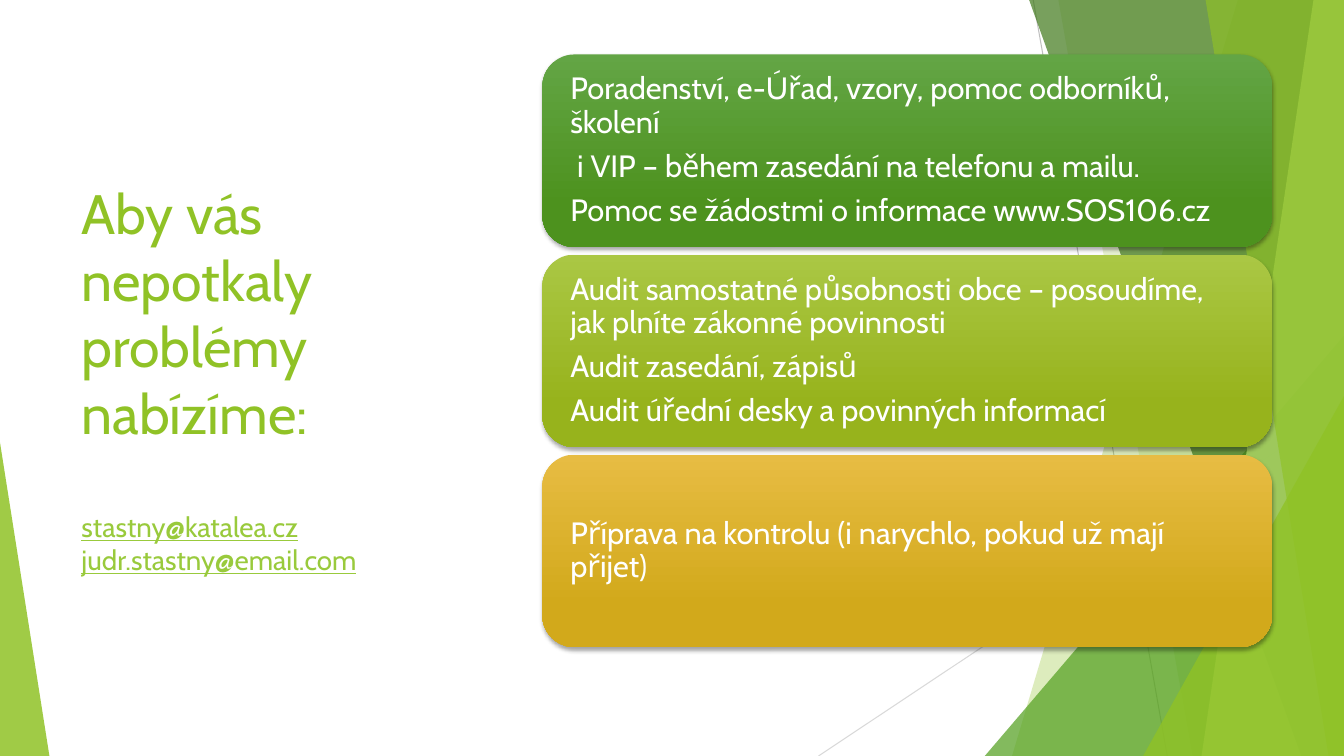
from dataclasses import dataclass

from lxml.etree import SubElement
from pptx import Presentation
from pptx.dml.color import RGBColor as Rgb
from pptx.enum.shapes import MSO_CONNECTOR as Link, MSO_SHAPE as Kind
from pptx.enum.text import MSO_ANCHOR as Anchor, PP_ALIGN as Align
from pptx.oxml.ns import qn
from pptx.util import Emu, Inches, Pt

# The grid has square cells; lengths below are counted in its columns and rows.
CELL = Inches(0.1)
WIDE, HIGH = 133.33, 75
FONT = "Cabin"
HUES = {
    "lime": "90C226", "leaf": "54A021", "moss": "3F7819", "pale": "C0E474",
    "mail": "99CA3C", "white": "FFFFFF", "black": "000000",
    "grey": "BFBFBF", "mist": "D9D9D9",
    "green1": "63A545", "green2": "4D921E",
    "olive1": "AAC744", "olive2": "97B31C",
    "gold1": "E7BC43", "gold2": "D2A91B",
}


@dataclass(frozen=True)
class Ray:
    start: tuple[float, float]
    end: tuple[float, float]
    hue: str


@dataclass(frozen=True)
class Facet:
    """A band from its top and base columns to the right edge."""
    top: float
    base: float
    hue: str
    alpha: int


@dataclass(frozen=True)
class Wedge:
    """A triangle standing on the bottom edge; tip is its apex share."""
    left: float
    top: float
    width: float
    tip: int
    hue: str
    alpha: int


@dataclass(frozen=True)
class Card:
    hues: tuple[str, str]
    lines: tuple[str, ...]


RAYS = (
    Ray((102.5, 0), (115.8, HIGH), "grey"),
    Ray((WIDE, 40.3), (81.2, HIGH), "mist"),
)
DECOR = (
    Facet(122.8, 100.4, "lime", 30),
    Facet(105, 118.3, "lime", 20),
    Wedge(97.7, 33.3, 35.63, 1, "leaf", 72),
    Facet(102.1, 129.1, "moss", 70),
    Facet(130.3, 119.2, "pale", 70),
    Facet(119.6, 131.8, "lime", 65),
    Wedge(113.4, 39.3, 19.93, 1, "lime", 80),
    Wedge(0, 43.9, 4.9, 0, "lime", 85),
)
CARDS = (
    Card(("green1", "green2"), (
        "Poradenství, e-Úřad, vzory, pomoc odborníků, školení",
        " i VIP – během zasedání na telefonu a mailu.",
        "Pomoc se žádostmi o informace www.SOS106.cz")),
    Card(("olive1", "olive2"), (
        "Audit samostatné působnosti obce – posoudíme, jak plníte zákonné povinnosti",
        "Audit zasedání, zápisů",
        "Audit úřední desky a povinných informací")),
    Card(("gold1", "gold2"), (
        "Příprava na kontrolu (i narychlo, pokud už mají přijet)",)),
)
TITLE = "Aby vás nepotkaly problémy nabízíme:"
MAILS = ("stastny@katalea.cz", "judr.stastny@email.com")


def grid(*cells: float) -> list[Emu]:
    return [Emu(round(n * CELL)) for n in cells]


def tint(name: str) -> Rgb:
    return Rgb.from_string(HUES[name])


def put(frame, text: str, *, size: float, hue: str, under: bool = False,
        before: float = 0, after: float = 0, lead: float = 1) -> None:
    """Add one paragraph, using the empty first one if it is free."""
    para = frame.add_paragraph() if frame.text else frame.paragraphs[0]
    para.alignment, para.line_spacing = Align.LEFT, lead
    para.space_before, para.space_after = Pt(before), Pt(after)
    run = para.add_run()
    run.text = text
    font = run.font
    font.name, font.size, font.underline = FONT, Pt(size), under
    font.color.rgb = tint(hue)


def paint(shape, hue: str, alpha: int) -> None:
    shape.shadow.inherit = False
    shape.line.fill.background()
    shape.fill.solid()
    shape.fill.fore_color.rgb = tint(hue)
    tone = shape.element.spPr.find(qn("a:solidFill")).find(qn("a:srgbClr"))
    SubElement(tone, qn("a:alpha"), val=str(alpha * 1000))


def shade(shape) -> None:
    """Give the shape a soft shadow that falls straight down."""
    shape.shadow.inherit = False
    cast = SubElement(shape.element.spPr.find(qn("a:effectLst")), qn("a:outerShdw"),
                      blurRad=str(Pt(3)), dist=str(Pt(2)), dir="5400000",
                      algn="ctr", rotWithShape="0")
    tone = SubElement(cast, qn("a:srgbClr"), val=HUES["black"])
    SubElement(tone, qn("a:alpha"), val="35000")


def draw_ray(shapes, ray: Ray) -> None:
    line = shapes.add_connector(Link.STRAIGHT, *grid(*ray.start, *ray.end))
    line.line.color.rgb = tint(ray.hue)
    line.line.width = Pt(0.75)
    SubElement(line.element.spPr, qn("a:effectLst"))


def draw_facet(shapes, facet: Facet) -> None:
    pen = shapes.build_freeform(*grid(facet.top, 0))
    pen.add_line_segments([grid(WIDE, 0), grid(WIDE, HIGH), grid(facet.base, HIGH)])
    paint(pen.convert_to_shape(), facet.hue, facet.alpha)


def draw_wedge(shapes, wedge: Wedge) -> None:
    shape = shapes.add_shape(Kind.ISOSCELES_TRIANGLE, *grid(
        wedge.left, wedge.top, wedge.width, HIGH - wedge.top))
    shape.adjustments[0] = wedge.tip
    paint(shape, wedge.hue, wedge.alpha)


def draw_card(shapes, card: Card, row: float) -> None:
    shape = shapes.add_shape(Kind.ROUNDED_RECTANGLE, *grid(53.8, row, 72.4, 19.1))
    shape.fill.gradient()
    shape.fill.gradient_angle = 270
    for stop, hue, place in zip(shape.fill.gradient_stops, card.hues, (0, 0.78)):
        stop.color.rgb, stop.position = tint(hue), place
    shape.line.fill.background()
    shade(shape)
    frame = shape.text_frame
    frame.word_wrap, frame.vertical_anchor = True, Anchor.MIDDLE
    frame.margin_left = frame.margin_right = grid(1.85)[0]
    for text in card.lines:
        put(frame, text, size=22, hue="white", after=7.7, lead=0.9)


def draw_title(shapes) -> None:
    frame = shapes.add_textbox(*grid(7.1, 15.1, 38.8, 44.8)).text_frame
    frame.word_wrap, frame.vertical_anchor = True, Anchor.MIDDLE
    put(frame, TITLE, size=39.6, hue="lime")
    for text, gap in zip(MAILS, (46, 0)):
        put(frame, text, size=19.8, hue="mail", under=True, before=gap)


def main() -> None:
    deck = Presentation()
    deck.slide_width, deck.slide_height = grid(WIDE, HIGH)
    shapes = deck.slides.add_slide(deck.slide_layouts[6]).shapes
    for ray in RAYS:
        draw_ray(shapes, ray)
    for part in DECOR:
        if isinstance(part, Facet):
            draw_facet(shapes, part)
        else:
            draw_wedge(shapes, part)
    draw_title(shapes)
    for index, card in enumerate(CARDS):
        draw_card(shapes, card, 5.4 + 19.85 * index)
    deck.save("out.pptx")


if __name__ == "__main__":
    main()
